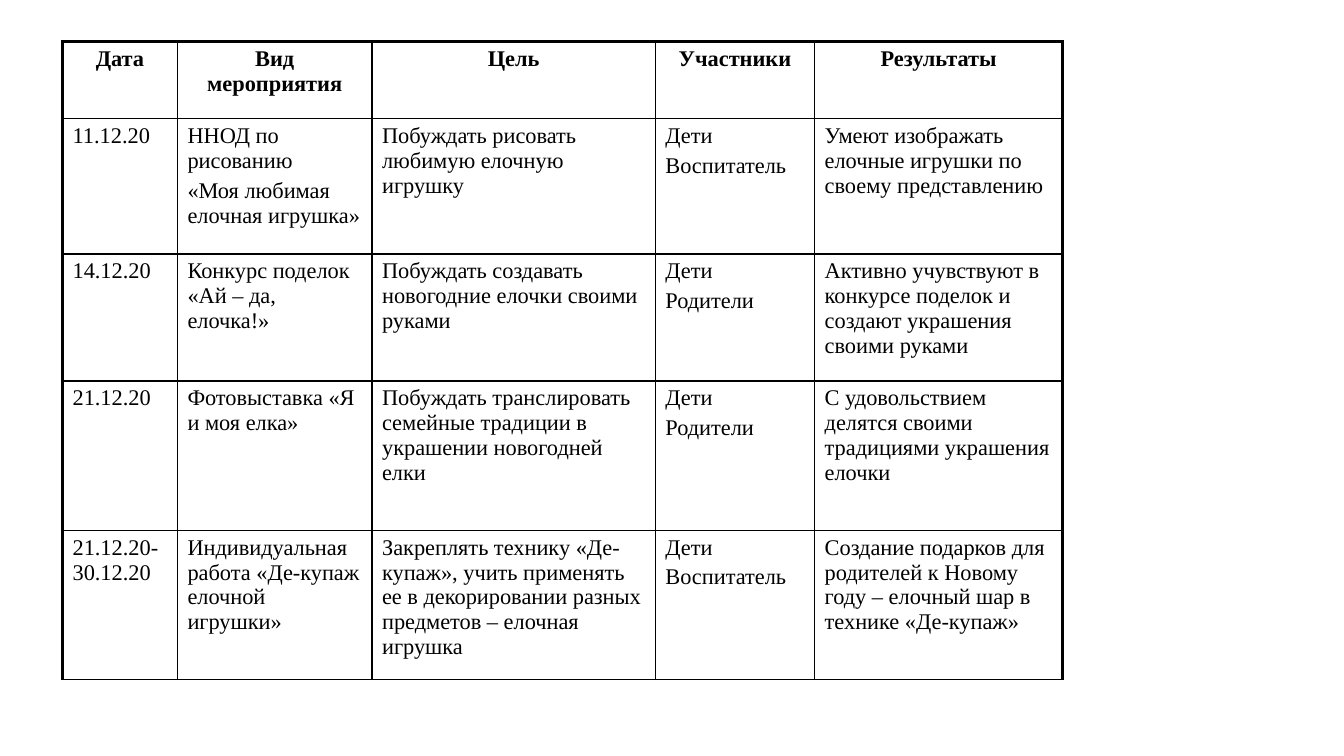
from lxml.etree import SubElement
from pptx import Presentation
from pptx.dml.color import RGBColor
from pptx.enum.text import PP_ALIGN
from pptx.oxml.ns import qn
from pptx.util import Inches, Pt

COLORS = {"ink": "000000"}
THIN, THICK = Pt(1), Pt(2.25)

COLUMN_WIDTHS = [1.14, 1.93, 2.81, 1.58, 2.46]
ROW_HEIGHTS = [0.77, 1.34, 1.26, 1.48, 1.48]
PLAN = [
    ["Дата", "Вид мероприятия", "Цель", "Участники", "Результаты"],
    ["11.12.20", "ННОД по рисованию\n«Моя любимая елочная игрушка»",
     "Побуждать рисовать любимую елочную игрушку", "Дети\nВоспитатель",
     "Умеют изображать елочные игрушки по своему представлению"],
    ["14.12.20", "Конкурс поделок «Ай – да, елочка!»",
     "Побуждать создавать новогодние елочки своими руками", "Дети\nРодители",
     "Активно учувствуют в конкурсе поделок и создают украшения своими руками"],
    ["21.12.20", "Фотовыставка «Я и моя елка»",
     "Побуждать транслировать семейные традиции в украшении новогодней елки",
     "Дети\nРодители",
     "С удовольствием делятся своими традициями украшения елочки"],
    ["21.12.20-30.12.20", "Индивидуальная работа «Де-купаж елочной игрушки»",
     "Закреплять технику «Де-купаж», учить применять ее в декорировании "
     "разных предметов – елочная игрушка", "Дети\nВоспитатель",
     "Создание подарков для родителей к Новому году – елочный шар "
     "в технике «Де-купаж»"],
]


def write(frame, text, size=16, bold=False, align=PP_ALIGN.LEFT):
    frame.text = text
    for index, paragraph in enumerate(frame.paragraphs):
        paragraph.alignment = align
        if index:
            paragraph.space_before = Pt(3.5)
        for run in paragraph.runs:
            run.font.name = "Times New Roman"
            run.font.size = Pt(size)
            run.font.bold = bold
            run.font.color.rgb = RGBColor.from_string(COLORS["ink"])


def draw_borders(cell, widths):
    properties = cell._tc.get_or_add_tcPr()
    for side, width in widths.items():
        line = SubElement(properties, qn(f"a:ln{side}"), w=str(width))
        fill = SubElement(line, qn("a:solidFill"))
        SubElement(fill, qn("a:srgbClr"), val=COLORS["ink"])


prs = Presentation()
prs.slide_width, prs.slide_height = Inches(13.33), Inches(7.5)
slide = prs.slides.add_slide(prs.slide_layouts[6])

schedule = slide.shapes.add_table(
    len(ROW_HEIGHTS), len(COLUMN_WIDTHS), Inches(0.62), Inches(0.41),
    Inches(sum(COLUMN_WIDTHS)), Inches(sum(ROW_HEIGHTS))).table
schedule.first_row = False
schedule.horz_banding = False
for column, width in zip(schedule.columns, COLUMN_WIDTHS):
    column.width = Inches(width)
for row, height in zip(schedule.rows, ROW_HEIGHTS):
    row.height = Inches(height)

last_column = len(COLUMN_WIDTHS) - 1
for r, entries in enumerate(PLAN):
    is_header = r == 0
    for c, entry in enumerate(entries):
        cell = schedule.cell(r, c)
        write(cell.text_frame, entry, bold=is_header,
              align=PP_ALIGN.CENTER if is_header else PP_ALIGN.LEFT)
        draw_borders(cell, {
            "L": THICK if c == 0 else THIN,
            "R": THICK if c == last_column else THIN,
            "T": THICK if is_header else THIN,
            "B": THIN,
        })
        cell.fill.background()

prs.save("out.pptx")
